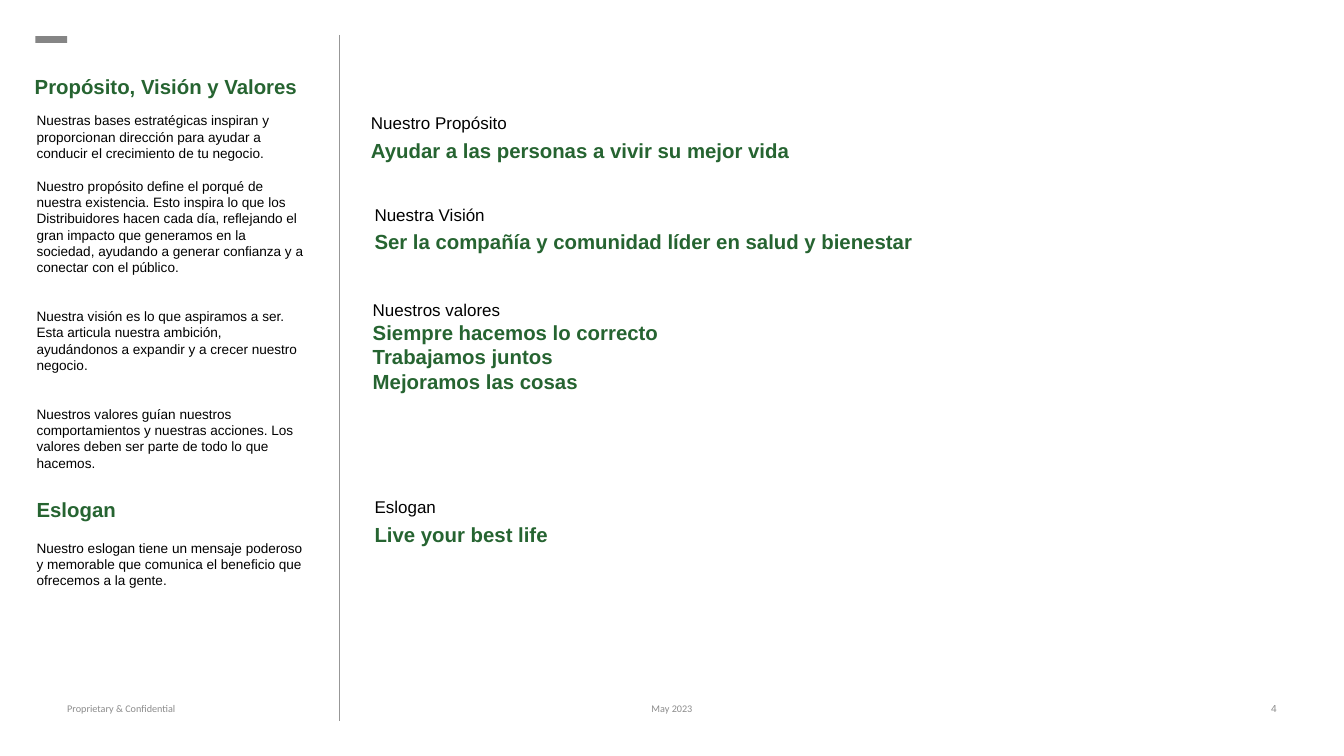
from lxml import etree
from pptx import Presentation
from pptx import util as u
from pptx.dml import color
from pptx.enum import shapes, text
from pptx.oxml import ns

GREEN, BLACK, GREY = "266431", "000000", "8C8C8C"
LINE_HEIGHT = 1.2

PURPOSE_NOTES = [
    ("Nuestras bases estratégicas inspiran y proporcionan dirección para ayudar a "
     "conducir el crecimiento de tu negocio.", 0),
    ("Nuestro propósito define el porqué de nuestra existencia. Esto inspira lo que los "
     "Distribuidores hacen cada día, reflejando el gran impacto que generamos en la "
     "sociedad, ayudando a generar confianza y a conectar con el público.", 19.2),
    ("Nuestra visión es lo que aspiramos a ser. Esta articula nuestra ambición, "
     "ayudándonos a expandir y a crecer nuestro negocio.", 38.4),
    ("Nuestros valores guían nuestros comportamientos y nuestras acciones. Los valores "
     "deben ser parte de todo lo que hacemos.", 38.4),
]
SLOGAN_NOTE = ("Nuestro eslogan tiene un mensaje poderoso y memorable que comunica el "
               "beneficio que ofrecemos a la gente.")

STATEMENTS = [
    (0, 0, "Nuestro Propósito", ["Ayudar a las personas a vivir su mejor vida"], 6),
    (4.3, 108, "Nuestra Visión",
     ["Ser la compañía y comunidad líder en salud y bienestar"], 6),
    (2.2, 220.3, "Nuestros valores",
     ["Siempre hacemos lo correcto", "Trabajamos juntos", "Mejoramos las cosas"], 0),
    (4.3, 452.2, "Eslogan", ["Live your best life"], 6),
]


def rgb(value):
    return color.RGBColor.from_string(value)


def add_text(slide, box, lines, align=text.PP_ALIGN.LEFT, inset=True):
    frame = slide.shapes.add_textbox(*map(u.Pt, box)).text_frame
    frame.word_wrap = True
    frame.auto_size = text.MSO_AUTO_SIZE.SHAPE_TO_FIT_TEXT
    if not inset:
        frame.margin_left = frame.margin_right = 0
        frame.margin_top = frame.margin_bottom = 0
    for index, (wording, size, hue, bold, before, font) in enumerate(lines):
        paragraph = frame.add_paragraph() if index else frame.paragraphs[0]
        paragraph.alignment = align
        paragraph.space_before = u.Pt(before)
        paragraph.line_spacing = u.Pt(size * LINE_HEIGHT)
        run = paragraph.add_run()
        run.text = wording
        run.font.name = font
        run.font.size = u.Pt(size)
        run.font.bold = bold
        run.font.color.rgb = rgb(hue)


def heading(wording, before=0):
    return wording, 24, GREEN, True, before, "Arial"


def body(wording, before=0, size=16):
    return wording, size, BLACK, False, before, "Arial"


def add_sidebar(slide, left, top, width):
    mark = slide.shapes.add_shape(
        shapes.MSO_SHAPE.RECTANGLE, u.Pt(left + 8), u.Pt(top), u.Pt(37.4), u.Pt(7.9))
    mark.shadow.inherit = False
    mark.fill.solid()
    mark.fill.fore_color.rgb = rgb("858585")
    mark.line.fill.background()

    add_text(slide, (left, top + 41.8, width, 36),
             [heading("Propósito, Visión y Valores")])
    add_text(slide, (left + 2.2, top + 86.4, width, 433.4),
             [body(*note) for note in PURPOSE_NOTES])
    add_text(slide, (left + 2.2, top + 539.3, width, 36), [heading("Eslogan")])
    add_text(slide, (left + 2.2, top + 589.5, width, 65), [body(SLOGAN_NOTE)])


def add_divider(slide, x, top, bottom):
    divider = slide.shapes.add_connector(
        shapes.MSO_CONNECTOR.STRAIGHT, u.Pt(x), u.Pt(top), u.Pt(x), u.Pt(bottom))
    divider.line.width = u.Pt(1)
    divider.line.color.rgb = rgb("979797")
    properties = divider.element.find(ns.qn("p:spPr"))
    etree.SubElement(properties, ns.qn("a:effectLst"))


def add_statements(slide, left, top, width):
    for shift, drop, label, claims, gap in STATEMENTS:
        lines = [body(label, size=20)] + [heading(claim, gap) for claim in claims]
        height = 7.2 + sum(line[1] * LINE_HEIGHT + line[4] for line in lines)
        add_text(slide, (left + shift, top + drop, width, height), lines)


def add_footer(slide, left, top, width):
    height = 14.4
    parts = [
        (0, 216, "Proprietary & Confidential", text.PP_ALIGN.LEFT, "Calibri"),
        (660.2, 104.4, "May 2023", text.PP_ALIGN.CENTER, "Calibri"),
        (width - 364.3, 364.3, "4", text.PP_ALIGN.RIGHT, "Arial"),
    ]
    for shift, part_width, wording, align, font in parts:
        add_text(slide, (left + shift, top, part_width, height),
                 [(wording, 12, GREY, False, 0, font)], align, inset=False)


def main():
    presentation = Presentation()
    presentation.slide_width = u.Pt(1583.28)
    presentation.slide_height = u.Pt(890.64)
    slide = presentation.slides.add_slide(presentation.slide_layouts[6])
    add_sidebar(slide, 33.8, 42.5, 332.6)
    add_divider(slide, 400.3, 41, 848.9)
    add_statements(slide, 429.8, 128.9, 949.7)
    add_footer(slide, 79.2, 828, 1424.9)
    presentation.save("out.pptx")


if __name__ == "__main__":
    main()
